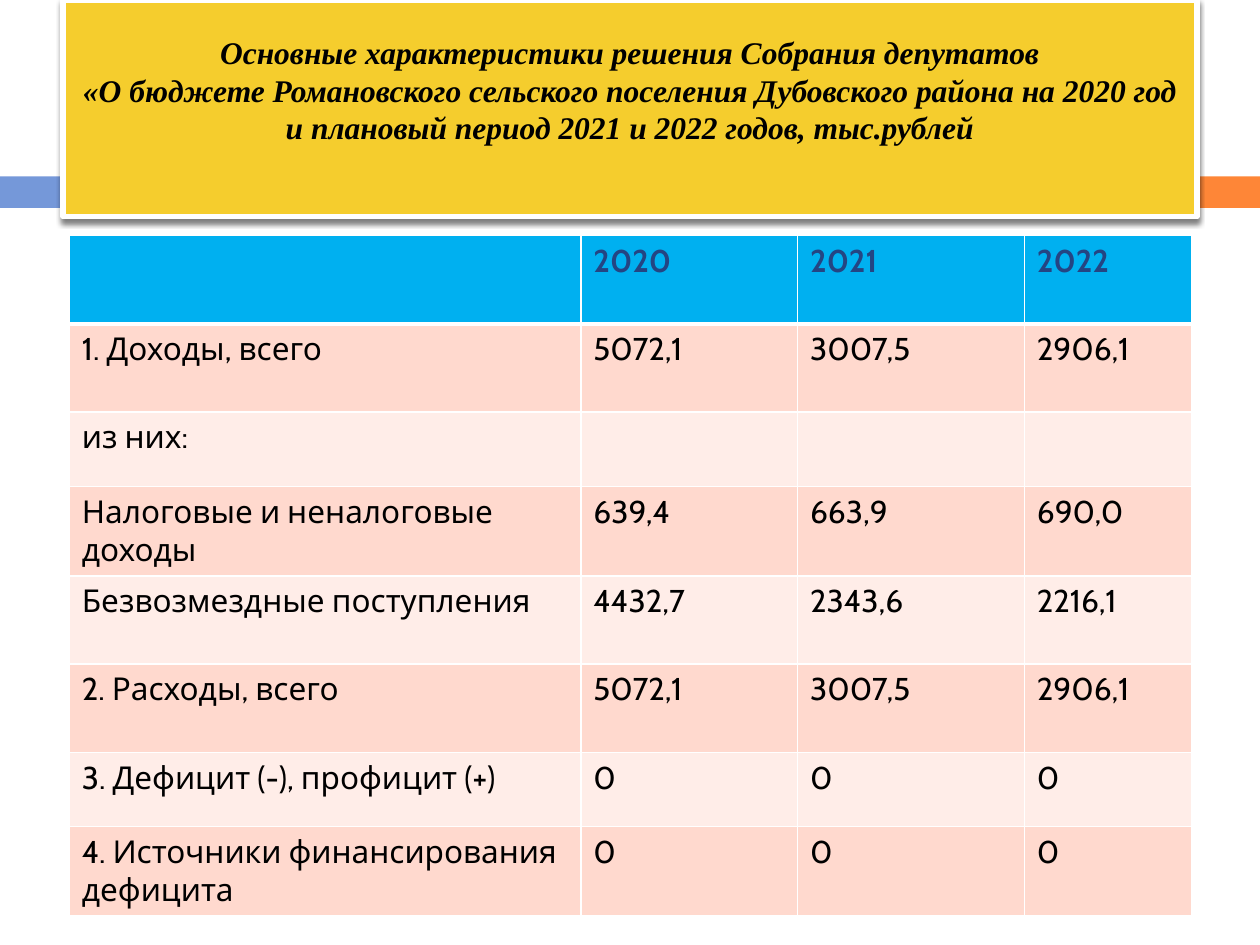
import pptx
import pptx.dml.color
import pptx.enum.shapes
import pptx.enum.text
import pptx.oxml
import pptx.oxml.ns
import pptx.util

W, H = 10, 7.5
COLORS = {
    "white": "FFFFFF", "black": "000000", "blue": "7598D9", "orange": "FE8637",
    "yellow": "F5CD2D", "header": "00B0F0", "year": "244583",
    "odd": "FFD9CE", "even": "FFEDE8",
}
TITLE = (
    "Основные характеристики решения Собрания депутатов\v"
    "«О бюджете Романовского сельского поселения Дубовского района на 2020 год "
    "и плановый период 2021 и 2022 годов, тыс.рублей"
)
COL_WIDTHS = [4.06, 1.72, 1.8, 1.33]
TALL, SHORT = 0.7, 0.59
ROWS = [
    (TALL, ["", "2020", "2021", "2022"]),
    (TALL, ["1. Доходы, всего", "5072,1", "3007,5", "2906,1"]),
    (SHORT, ["из них:", "", "", ""]),
    (TALL, ["Налоговые и неналоговые доходы", "639,4", "663,9", "690,0"]),
    (TALL, ["Безвозмездные поступления", "4432,7", "2343,6", "2216,1"]),
    (TALL, ["2. Расходы, всего", "5072,1", "3007,5", "2906,1"]),
    (SHORT, ["3. Дефицит (-), профицит (+)", "0", "0", "0"]),
    (TALL, ["4. Источники финансирования дефицита", "0", "0", "0"]),
]
PLAIN_TABLE_STYLE = "{2D5ABB26-0587-4C30-8999-92F81FD0307C}"


def rgb(name):
    return pptx.dml.color.RGBColor.from_string(COLORS[name])


def parse_xml(xml):
    return pptx.oxml.parse_xml(xml.replace(">", f" {pptx.oxml.ns.nsdecls('a')}>", 1))


def set_font(p, name, color, bold=False, italic=False):
    p.font.name = name
    p.font.size = pptx.util.Pt(18)
    p.font.bold = bold
    p.font.italic = italic
    p.font.color.rgb = rgb(color)


def add_rect(s, left, top, width, height, color):
    box = [pptx.util.Inches(v) for v in (left, top, width, height)]
    sp = s.shapes.add_shape(pptx.enum.shapes.MSO_SHAPE.RECTANGLE, *box)
    sp.shadow.inherit = False
    sp.fill.solid()
    sp.fill.fore_color.rgb = rgb(color)
    sp.line.fill.background()
    return sp


def add_drop_shadow(sp):
    effects = sp._element.spPr.find(pptx.oxml.ns.qn("a:effectLst"))
    effects.append(parse_xml(
        f'<a:outerShdw blurRad="{pptx.util.Pt(3)}" dist="{pptx.util.Pt(2)}" '
        f'dir="5400000" rotWithShape="0"><a:srgbClr val="{COLORS["black"]}">'
        '<a:alpha val="50000"/></a:srgbClr></a:outerShdw>'
    ))


def add_title(s):
    sp = add_rect(s, 0.05 * W, 0, 0.9 * W, 1.72, "yellow")
    sp.line.color.rgb = rgb("white")
    sp.line.width = pptx.util.Pt(3)
    add_drop_shadow(sp)
    tf = sp.text_frame
    tf.word_wrap = True
    tf.vertical_anchor = pptx.enum.text.MSO_ANCHOR.MIDDLE
    tf.margin_bottom = pptx.util.Inches(0.35)
    p = tf.paragraphs[0]
    p.text = TITLE
    p.alignment = pptx.enum.text.PP_ALIGN.CENTER
    set_font(p, "Times New Roman", "black", bold=True, italic=True)


def set_borders(cell, top, bottom):
    """Draw white cell borders; top and bottom are widths in points."""
    tc_pr = cell._tc.get_or_add_tcPr()
    for i, (side, width) in enumerate(zip("LRTB", (1, 1, top, bottom))):
        tc_pr.insert(i, parse_xml(
            f'<a:ln{side} w="{pptx.util.Pt(width)}"><a:solidFill>'
            f'<a:srgbClr val="{COLORS["white"]}"/></a:solidFill></a:ln{side}>'
        ))


def fill_cell(cell, text, row):
    is_header = row == 0
    cell.fill.solid()
    cell.fill.fore_color.rgb = rgb("header" if is_header else "odd" if row % 2 else "even")
    set_borders(cell, top=3 if row == 1 else 1, bottom=3 if is_header else 1)
    p = cell.text_frame.paragraphs[0]
    p.text = text
    set_font(p, "Cabin", "year" if is_header else "black", bold=is_header)


def add_budget_table(s):
    heights = [height for height, _ in ROWS]
    box = [pptx.util.Inches(v) for v in (0.55, 1.87, sum(COL_WIDTHS), sum(heights))]
    frame = s.shapes.add_table(len(ROWS), len(COL_WIDTHS), *box)
    frame._element.find(f".//{pptx.oxml.ns.qn('a:tableStyleId')}").text = PLAIN_TABLE_STYLE
    table = frame.table
    table.first_row = table.horz_banding = False
    for column, width in zip(table.columns, COL_WIDTHS):
        column.width = pptx.util.Inches(width)
    for r, (height, texts) in enumerate(ROWS):
        table.rows[r].height = pptx.util.Inches(height)
        for c, text in enumerate(texts):
            fill_cell(table.cell(r, c), text, r)


def main():
    prs = pptx.Presentation()
    prs.slide_width, prs.slide_height = pptx.util.Inches(W), pptx.util.Inches(H)
    s = prs.slides.add_slide(prs.slide_layouts[6])
    add_rect(s, 0, 1.4, 0.58, 0.25, "blue")
    add_rect(s, 0.65, 1.4, W - 0.65, 0.25, "orange")
    add_title(s)
    add_budget_table(s)
    prs.save("out.pptx")


if __name__ == "__main__":
    main()
